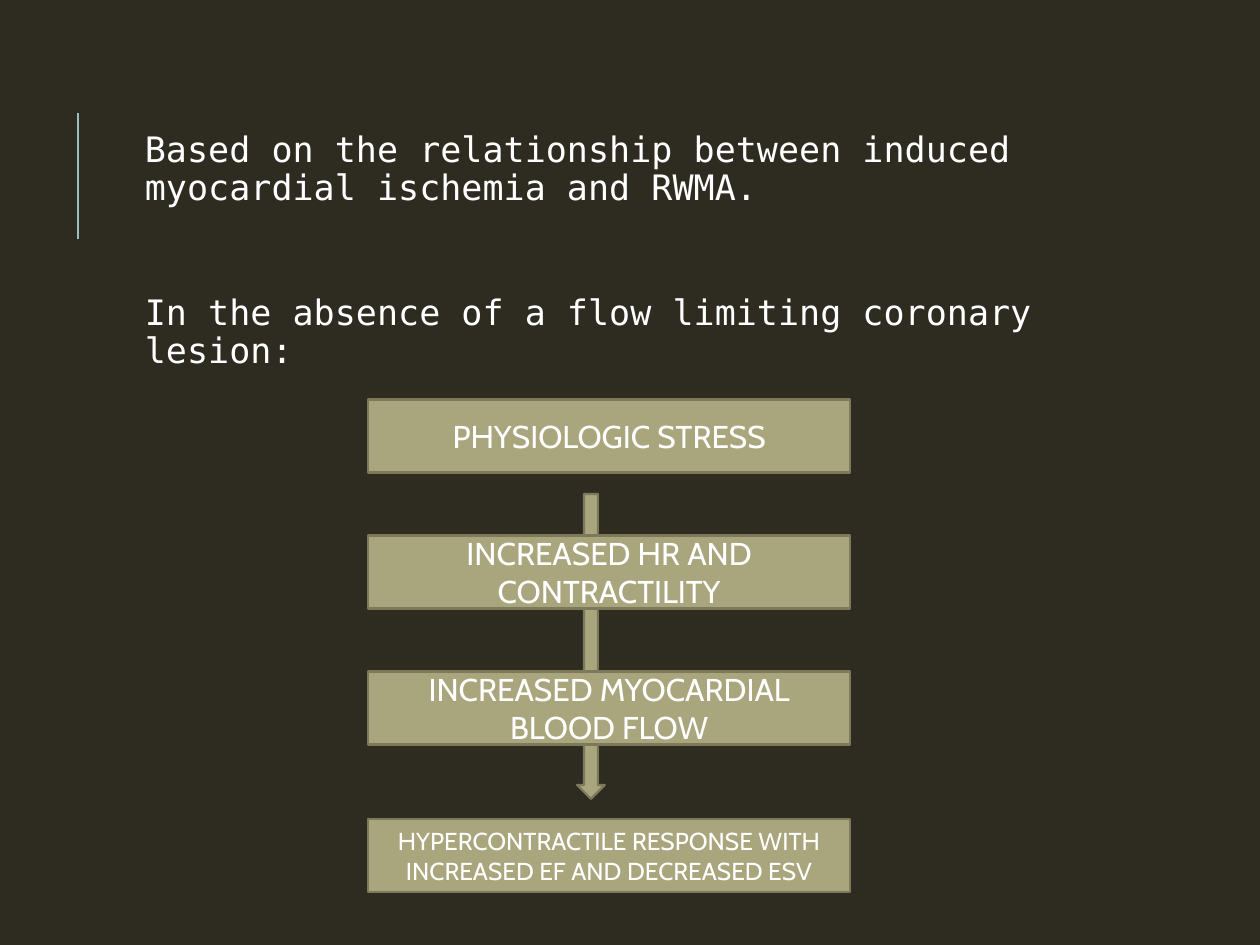
from lxml import etree
from pptx import Presentation
from pptx.dml.color import RGBColor
from pptx.enum import shapes, text
from pptx.oxml import ns
from pptx.util import Inches, Pt

BACKGROUND = RGBColor(0x2E, 0x2B, 0x21)
ACCENT = RGBColor(0x9C, 0xBE, 0xBD)
KHAKI = RGBColor(0xA9, 0xA5, 0x7C)
OUTLINE = RGBColor(0x7D, 0x7A, 0x5C)
WHITE = RGBColor(0xFF, 0xFF, 0xFF)

presentation = Presentation()
presentation.slide_width, presentation.slide_height = Inches(10), Inches(7.5)
slide = presentation.slides.add_slide(presentation.slide_layouts[1])
slide.background.fill.solid()
slide.background.fill.fore_color.rgb = BACKGROUND
title = slide.shapes.title
title.element.getparent().remove(title.element)


def apply_format(target, values):
    for name, value in values.items():
        setattr(target, name, value)


def add_khaki_shape(kind, left, top, width, height):
    shape = slide.shapes.add_shape(
        kind, Inches(left), Inches(top), Inches(width), Inches(height))
    shape.shadow.inherit = False
    shape.fill.solid()
    shape.fill.fore_color.rgb = KHAKI
    shape.line.color.rgb = OUTLINE
    shape.line.width = Pt(1.25)
    return shape


rule = slide.shapes.add_connector(
    shapes.MSO_CONNECTOR.STRAIGHT, Inches(0.62), Inches(1.9), Inches(0.62), Inches(0.9))
rule.line.color.rgb = ACCENT
rule.line.width = Pt(1.5)
etree.SubElement(rule.element.spPr, ns.qn("a:effectLst"))

add_khaki_shape(shapes.MSO_SHAPE.DOWN_ARROW, 4.58, 3.92, 0.22, 2.42)

body = slide.placeholders[1]
apply_format(body, {"left": Inches(1), "top": Inches(1),
                    "width": Inches(8.5), "height": Inches(5)})
apply_format(body.text_frame, {
    "margin_left": Inches(0.05), "margin_right": Inches(0.05),
    "margin_top": Inches(0.05), "margin_bottom": Inches(0.05),
    "word_wrap": True, "auto_size": text.MSO_AUTO_SIZE.NONE,
    "vertical_anchor": text.MSO_ANCHOR.TOP})
statements = [
    ("Based on the relationship between induced myocardial ischemia and RWMA.", 12),
    ("In the absence of a flow limiting coronary lesion:", 48),
]
body.text_frame.text = "\n".join(words for words, space in statements)
for paragraph, (words, space) in zip(body.text_frame.paragraphs, statements):
    apply_format(paragraph, {"line_spacing": 0.9, "space_before": Pt(space),
                             "space_after": Pt(2)})
    apply_format(paragraph.font, {"size": Pt(20), "name": "DejaVu Sans Mono"})
    paragraph.font.color.rgb = WHITE
    properties = paragraph._p.get_or_add_pPr()
    properties.set("marL", str(Inches(0.1)))
    properties.set("indent", "0")
    bullet = etree.Element(ns.qn("a:buNone"))
    properties.find(ns.qn("a:spcAft")).addnext(bullet)

steps = [
    ("PHYSIOLOGIC STRESS", 3.17, 18),
    ("INCREASED HR AND CONTRACTILITY", 4.25, 18),
    ("INCREASED MYOCARDIAL BLOOD FLOW", 5.33, 18),
    ("HYPERCONTRACTILE RESPONSE WITH INCREASED EF AND DECREASED ESV", 6.5, 14),
]
for label, top, size in steps:
    box = add_khaki_shape(shapes.MSO_SHAPE.RECTANGLE, 2.92, top, 3.83, 0.58)
    apply_format(box.text_frame, {"text": label, "word_wrap": True,
                                  "vertical_anchor": text.MSO_ANCHOR.MIDDLE})
    paragraph = box.text_frame.paragraphs[0]
    paragraph.alignment = text.PP_ALIGN.CENTER
    apply_format(paragraph.font, {"size": Pt(size), "name": "Cabin"})
    paragraph.font.color.rgb = WHITE

presentation.save("out.pptx")
